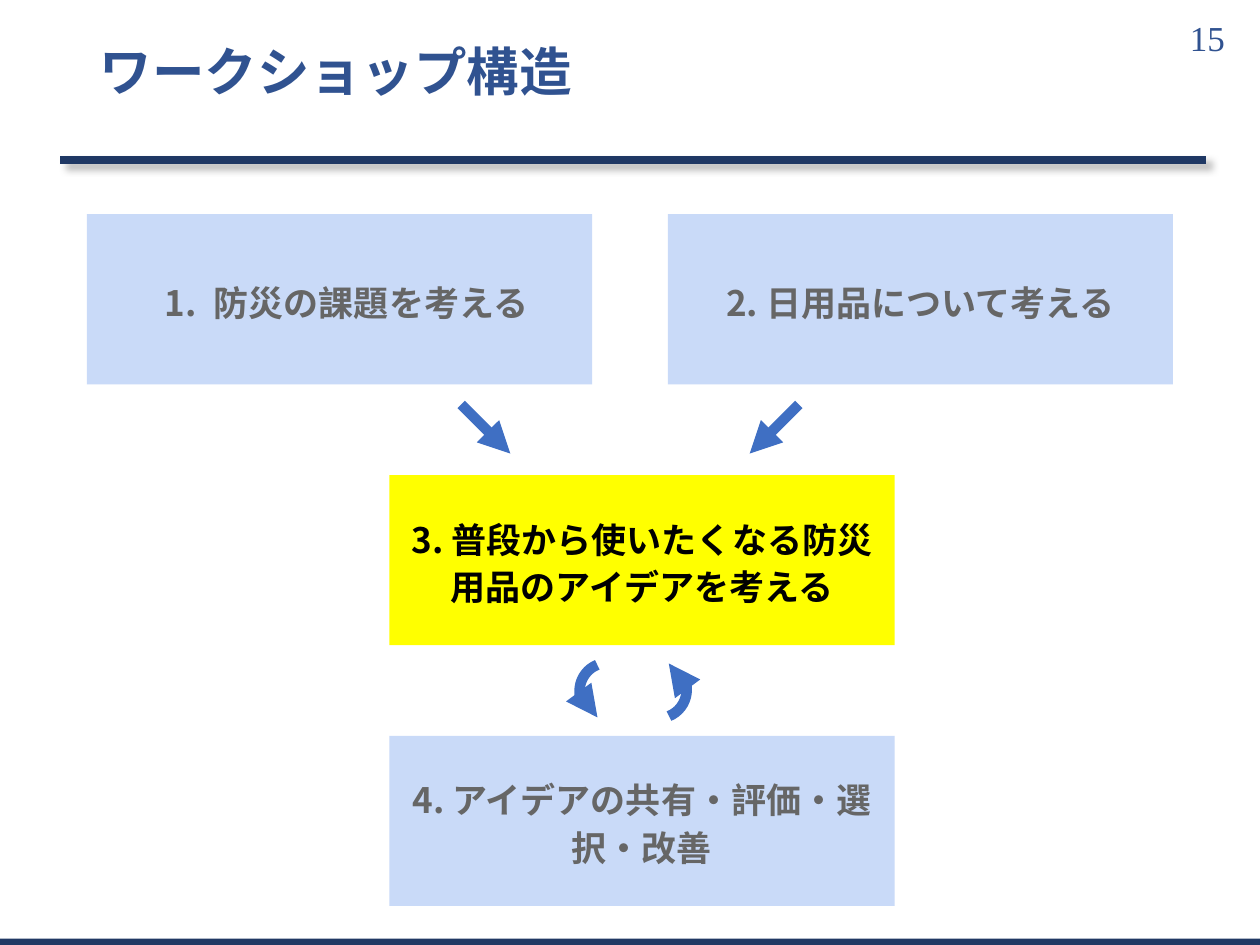
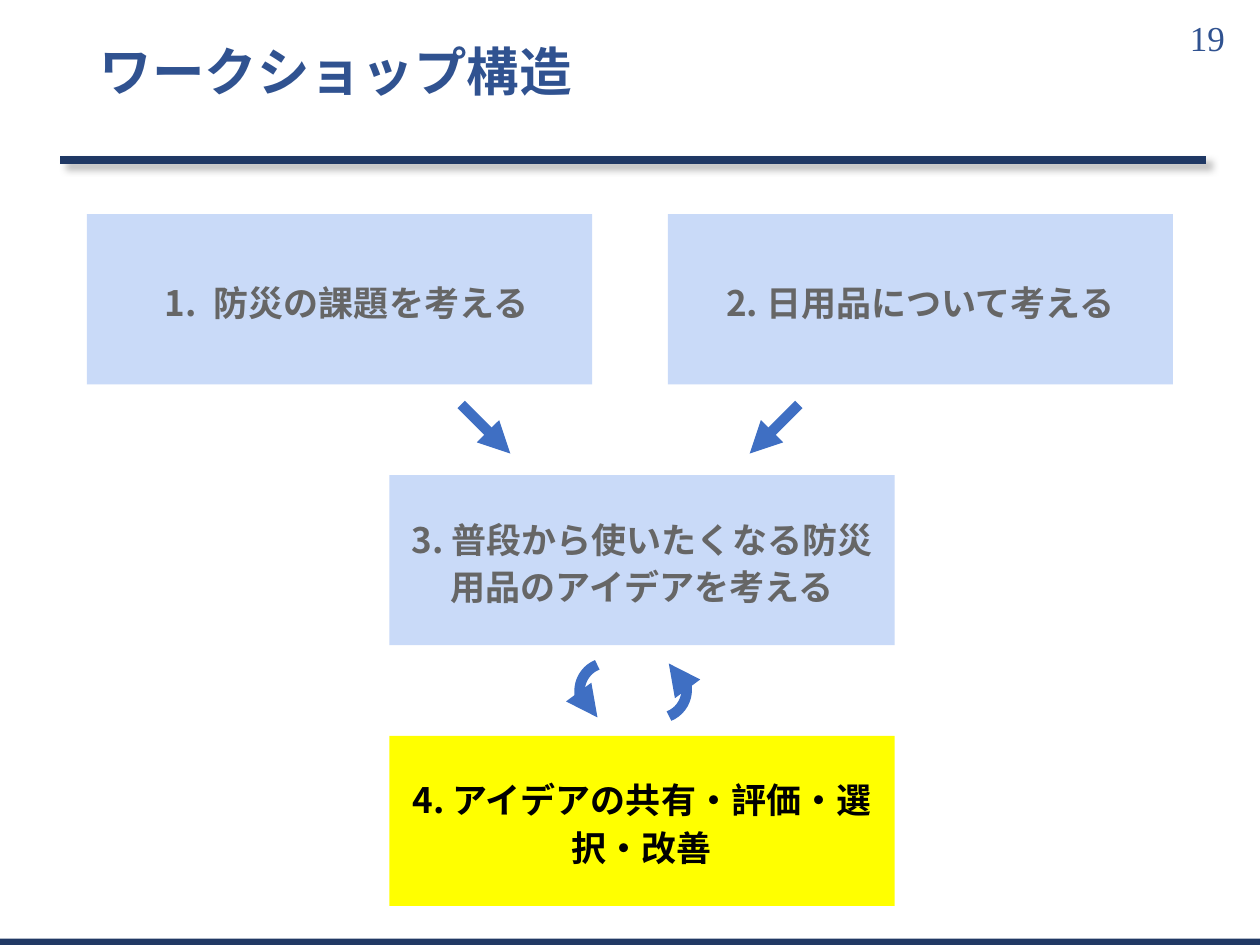
import pptx
import pptx.util
import pptx.dml.color
import pptx.enum.shapes
import pptx.enum.text
import pptx.oxml
import pptx.oxml.ns

Inches, Pt = pptx.util.Inches, pptx.util.Pt
SHAPE = pptx.enum.shapes.MSO_SHAPE
ALIGN = pptx.enum.text.PP_ALIGN
qn = pptx.oxml.ns.qn

COLORS = {"title": "305290", "rule": "1F3864", "band": "213964",
          "box": "C9DAF8", "focus": "FFFF00", "arrow": "3F6FC3",
          "dim": "666666", "text": "000000", "shade": "000000"}
SANS, SERIF = "Noto Sans CJK JP", "Times New Roman"
TITLE = "ワークショップ構造"
STEPS = ["防災の課題を考える", "2. 日用品について考える",
         "3. 普段から使いたくなる防災用品のアイデアを考える",
         "4. アイデアの共有・評価・選択・改善"]
PAGES = [(15, 3), (19, 4)]  # page number, step in focus
BOX_W, BOX_H = 4.01, 1.35


def rgb(name):
    return pptx.dml.color.RGBColor.from_string(COLORS[name])


def add_xml(parent, xml):
    space = pptx.oxml.ns.nsdecls("a")
    node = pptx.oxml.parse_xml(xml.replace("/>", f" {space}/>", 1)
                               if xml.count("<") == 1
                               else xml.replace(">", f" {space}>", 1))
    parent.append(node)


def place(shape, left, top, width, height):
    shape.left, shape.top = Inches(left), Inches(top)
    shape.width, shape.height = Inches(width), Inches(height)


def write(shape, text, size=20, font=SANS, color="text", bold=True,
          align=ALIGN.CENTER, space=None, pad=0.05, number=False):
    frame = shape.text_frame
    frame.word_wrap = True
    frame.auto_size = pptx.enum.text.MSO_AUTO_SIZE.NONE
    frame.vertical_anchor = pptx.enum.text.MSO_ANCHOR.MIDDLE
    frame.margin_left = frame.margin_right = Inches(0.1)
    frame.margin_top = frame.margin_bottom = Inches(pad)
    para = frame.paragraphs[0]
    if number:
        props = para._p.get_or_add_pPr()
        props.set("marL", str(Inches(0.5)))
        props.set("indent", str(Inches(-0.39)))
        add_xml(props, f'<a:buClr><a:srgbClr val="{COLORS[color]}"/></a:buClr>')
        add_xml(props, f'<a:buFont typeface="{SANS}"/>')
        add_xml(props, '<a:buAutoNum type="arabicPeriod"/>')
    para.alignment = align
    para.line_spacing = space
    run = para.add_run()
    run.text = text
    run.font.size, run.font.bold, run.font.name = Pt(size), bold, font
    run.font.color.rgb = rgb(color)
    add_xml(run._r.get_or_add_rPr(), f'<a:ea typeface="{font}"/>')


def add_rect(slide, fill, *box):
    shape = slide.shapes.add_shape(SHAPE.RECTANGLE, *map(Inches, box))
    shape.shadow.inherit = False
    shape.fill.solid()
    shape.fill.fore_color.rgb = rgb(fill)
    shape.line.fill.background()
    return shape


def style_line(shape, color, width, head=False):
    shape.line.color.rgb = rgb(color)
    shape.line.width = Pt(width)
    if head:
        add_xml(shape.line._get_or_add_ln(), '<a:tailEnd type="triangle"/>')


def add_line(slide, start, end, color, width, head=False, shade=""):
    line = slide.shapes.add_connector(
        pptx.enum.shapes.MSO_CONNECTOR.STRAIGHT, *map(Inches, start + end))
    style_line(line, color, width, head)
    add_xml(line._element.spPr, f"<a:effectLst>{shade}</a:effectLst>")


def add_arc(slide, left, top, flip):
    arc = slide.shapes.add_shape(SHAPE.ARC, Inches(left), Inches(top),
                                 Inches(0.45), Inches(0.45))
    arc.shadow.inherit = False
    arc.fill.background()
    arc.adjustments[0], arc.adjustments[1] = 175.24, 41.03
    arc._element.spPr.find(qn("a:xfrm")).set(flip, "1")
    style_line(arc, "arrow", 6, head=True)


def add_frame(slide, page):
    # Page number, title rule, bottom band and title
    box = slide.shapes.add_textbox(*map(Inches, (9.21, 0.1, 0.61, 0.4)))
    write(box, str(page), font=SERIF, color="title", bold=False,
          align=ALIGN.RIGHT)
    shade = (f'<a:outerShdw blurRad="{Pt(4)}" dist="{Pt(4)}" dir="2700000">'
             f'<a:srgbClr val="{COLORS["shade"]}"><a:alpha val="25000"/>'
             '</a:srgbClr></a:outerShdw>')
    add_line(slide, (0.48, 1.27), (9.57, 1.27), "rule", 5, shade=shade)
    add_rect(slide, "band", 0, 7.45, 10, 0.05)
    place(slide.shapes.title, 0.69, 0.19, 8.62, 0.8)
    write(slide.shapes.title, TITLE, size=30, color="title",
          align=ALIGN.LEFT, space=0.9, pad=0)


def add_flow(slide, left, top, width, focus):
    # Two steps on top, then two below them
    pitch = 2.07
    mid = left + 2.4
    spots = [(left, top), (left + width - BOX_W, top),
             (mid, top + pitch), (mid, top + 2 * pitch)]
    for step, (text, spot) in enumerate(zip(STEPS, spots), 1):
        active = step == focus
        box = add_rect(slide, "focus" if active else "box",
                       *spot, BOX_W, BOX_H)
        write(box, text, color="text" if active else "dim",
              space=1.14, number=step == 1)
    # Arrows that meet at the third step
    center = left + width / 2
    for side in (-1, 1):
        add_line(slide, (center + side * 1.34, top + 1.51),
                 (center + side * 0.95, top + 1.9), "arrow", 6, head=True)
    # Loop between the third and fourth steps
    add_arc(slide, center - 0.4, top + 3.56, "flipH")
    add_arc(slide, center, top + 3.55, "flipV")


def main():
    deck = pptx.Presentation()
    deck.slide_width, deck.slide_height = Inches(10), Inches(7.5)
    for page, focus in PAGES:
        slide = deck.slides.add_slide(deck.slide_layouts[5])
        add_frame(slide, page)
        add_flow(slide, 0.69, 1.7, 8.62, focus)
    deck.save("out.pptx")


if __name__ == "__main__":
    main()
